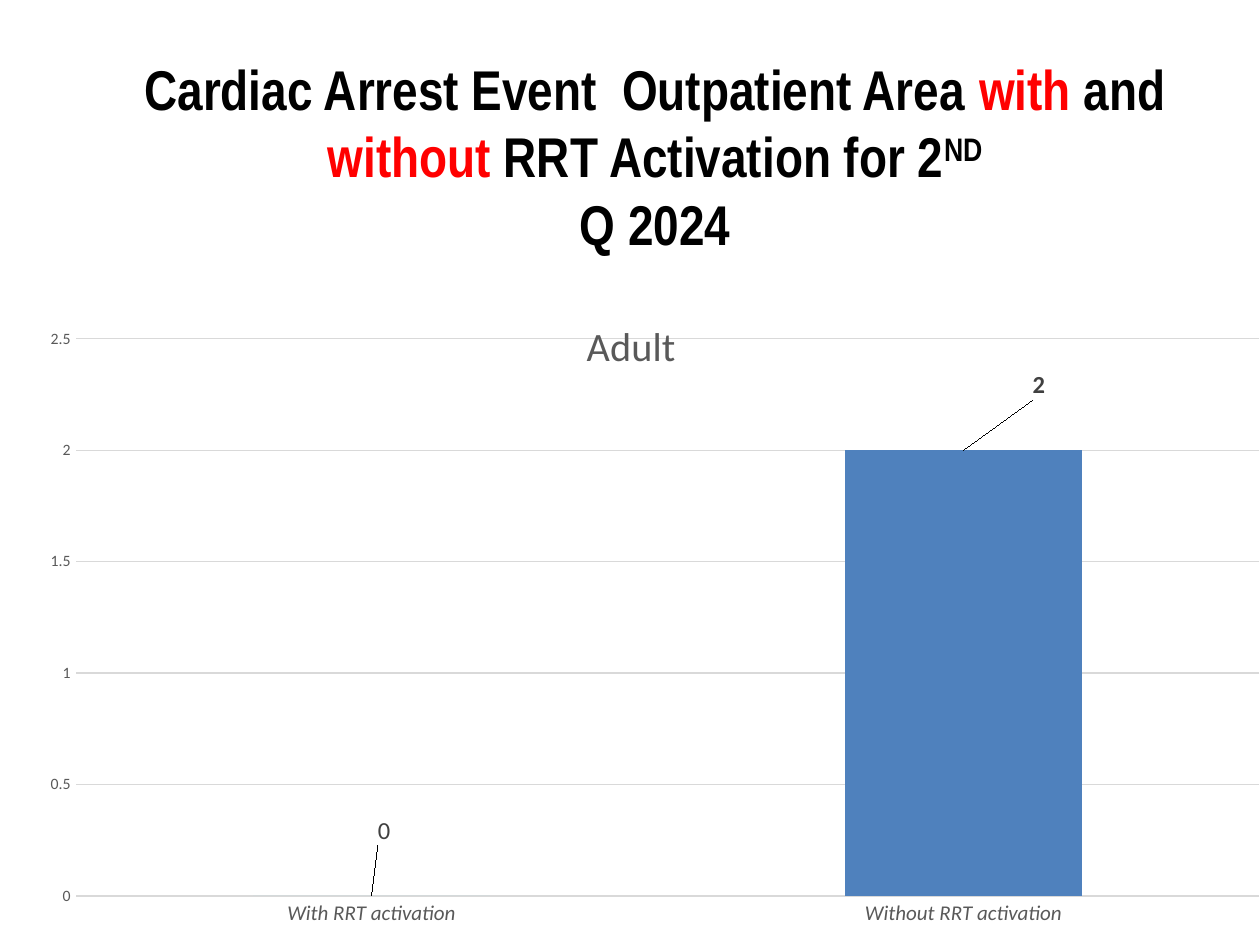
from copy import deepcopy
from lxml.etree import SubElement
from pptx import Presentation
from pptx.chart.data import CategoryChartData
from pptx.dml.color import RGBColor
from pptx.enum.chart import XL_CHART_TYPE, XL_LABEL_POSITION, XL_TICK_MARK
from pptx.enum.text import MSO_ANCHOR, PP_ALIGN
from pptx.oxml import parse_xml
from pptx.oxml.ns import nsdecls, qn
from pptx.util import Pt

COLORS = {"black": "000000", "red": "FF0000", "bar": "4F81BD", "pale": "B7DEE8",
          "grid": "D9D9D9", "axis": "595959", "label": "404040"}


def style(font, size, color, name="Calibri", bold=False, italic=False):
    font.size, font.name = Pt(size), name
    font.bold, font.italic = bold, italic
    font.color.rgb = RGBColor.from_string(COLORS[color])


def place(node, index, **values):
    """Give a chart part a manual layout, in fractions of the chart."""
    for old in node.findall(qn("c:layout")):
        node.remove(old)
    layout = parse_xml(f"<c:layout {nsdecls('c')}><c:manualLayout/></c:layout>")
    for key, value in values.items():
        SubElement(layout[0], qn("c:" + key)).set("val", str(value))
    node.insert(index, layout)


# Slide
PX = 914400 / 126
deck = Presentation()
deck.slide_width, deck.slide_height = round(1260 * PX), round(945 * PX)
slide = deck.slides.add_slide(deck.slide_layouts[5])

# Title
title = slide.shapes.title
title.left, title.top, title.width, title.height = (
    round(n * PX) for n in (84, 66, 1142, 179))
frame = title.text_frame
frame.word_wrap = True
frame.vertical_anchor = MSO_ANCHOR.MIDDLE
para = frame.paragraphs[0]
para.text = ""
para.alignment = PP_ALIGN.CENTER
parts = [("Cardiac Arrest Event  Outpatient Area ", "black"), ("with ", "red"),
         ("and ", "black"), ("without", "red"),
         (" RRT Activation for 2", "black"), ("ND", "black"), ("Q 2024", "black")]
for text, color in parts:
    if text == "Q 2024":
        para.add_line_break()
    run = para.add_run()
    run.text = text
    style(run.font, 32, color, "Arial Narrow", bold=True)
    if text == "ND":
        run.font._element.set("baseline", "30000")
para._p.find(qn("a:br")).append(deepcopy(run.font._element))

# Chart
data = CategoryChartData()
data.categories = ["With RRT activation", "Without RRT activation"]
data.add_series("Series 1", (0, 2))
box = [round(n * PX) for n in (0, 284, 1260, 645)]
chart = slide.shapes.add_chart(XL_CHART_TYPE.COLUMN_CLUSTERED, *box, data).chart
style(chart.font, 10, "black")
chart.has_legend = False
place(chart._chartSpace.chart.plotArea, 0, layoutTarget="inner",
      xMode="edge", yMode="edge", x=0.06, y=0.085, w=0.94, h=0.864)

# Chart title, laid over the plot
head = chart.chart_title
head.text_frame.text = "Adult"
style(head.text_frame.paragraphs[0].runs[0].font, 23, "axis")
place(head._element, 1, xMode="edge", yMode="edge", x=0.46, y=0.04)
head._element.find(qn("c:overlay")).set("val", "1")

# Axes
for axis, size in ((chart.category_axis, 12), (chart.value_axis, 9)):
    style(axis.tick_labels.font, size, "axis", italic=size == 12)
    axis.major_tick_mark = axis.minor_tick_mark = XL_TICK_MARK.NONE
    axis.format.line.fill.background()
scale = chart.value_axis
scale.minimum_scale, scale.maximum_scale, scale.major_unit = 0, 2.5, 0.5
grid = scale.major_gridlines.format.line
grid.width = Pt(0.75)
grid.color.rgb = RGBColor.from_string(COLORS["grid"])

# Bars and their shifted labels
plot = chart.plots[0]
plot.gap_width = 150
plot.vary_by_categories = False
bars = plot.series[0]
bars.format.fill.solid()
bars.format.fill.fore_color.rgb = RGBColor.from_string(COLORS["bar"])
first = bars.points[0].format.fill
first.solid()
first.fore_color.rgb = RGBColor.from_string(COLORS["pale"])
bars.data_labels.show_value = True
style(bars.data_labels.font, 14, "label", bold=True)
for i, (dx, dy) in enumerate([(0.01, -0.07), (0.06, -0.07)]):
    label = bars.points[i].data_label
    style(label.font, 14, "label", bold=i == 1)
    label.position = XL_LABEL_POSITION.OUTSIDE_END
    place(label._dLbl, 1, x=dx, y=dy)

deck.save("out.pptx")
